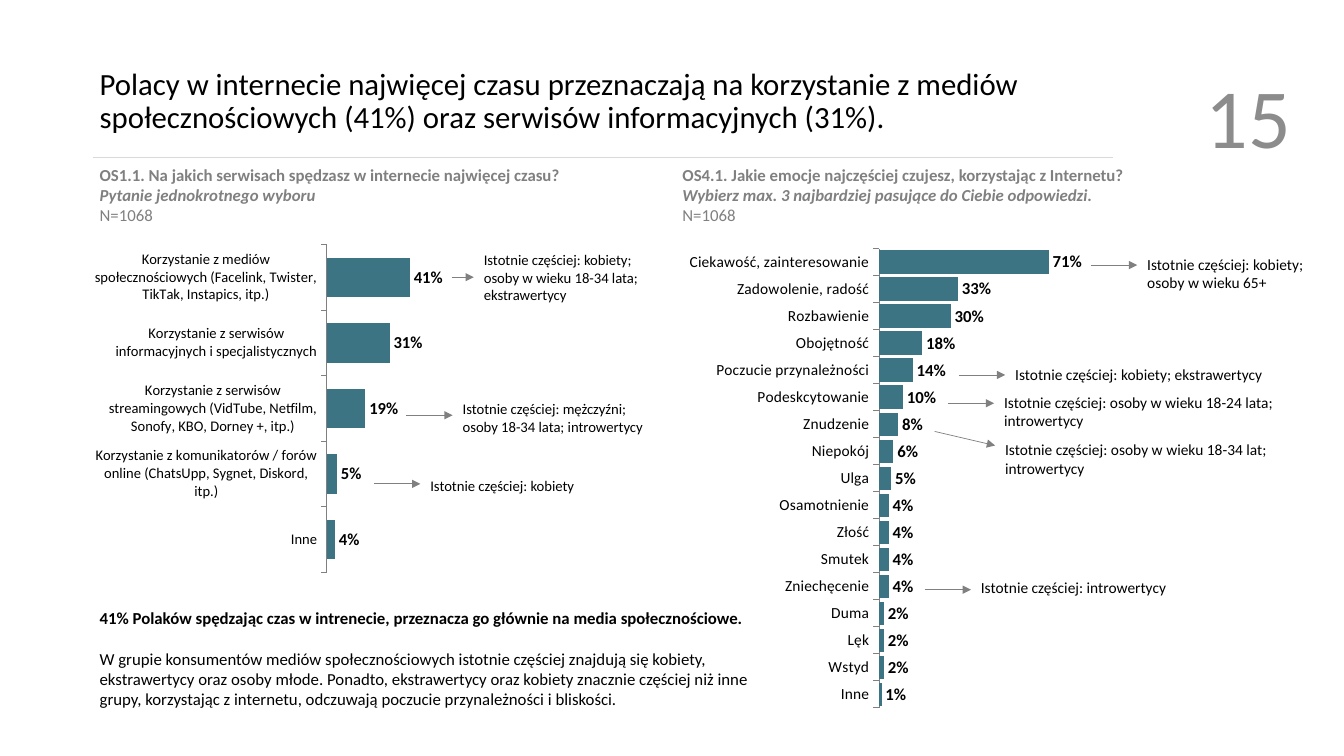
from collections import namedtuple

from lxml import etree
from pptx import Presentation
from pptx.chart.data import CategoryChartData
from pptx.dml.color import RGBColor
from pptx.enum.chart import XL_CHART_TYPE as ChartType
from pptx.enum.chart import XL_LABEL_POSITION as LabelPosition
from pptx.enum.chart import XL_TICK_LABEL_POSITION as TickLabelPosition
from pptx.enum.chart import XL_TICK_MARK as TickMark
from pptx.enum.shapes import MSO_CONNECTOR as Connector
from pptx.enum.text import MSO_ANCHOR as Anchor
from pptx.enum.text import PP_ALIGN as Align
from pptx.oxml import parse_xml
from pptx.oxml.ns import nsdecls, qn
from pptx.util import Inches, Pt

FONT = "Calibri"
BLACK = RGBColor(0x00, 0x00, 0x00)
WHITE = RGBColor(0xFF, 0xFF, 0xFF)
GREY = RGBColor(0x80, 0x80, 0x80)
NUMBER_GREY = RGBColor(0x8C, 0x8C, 0x8C)
RULE_GREY = RGBColor(0xD9, 0xD9, 0xD9)
TEAL = RGBColor(0x3C, 0x74, 0x83)

Box = namedtuple("Box", "left top width height")
# Arrow start and text box are measured from the panel corner and the arrow end.
Callout = namedtuple("Callout", "x y dx dy rise width text")

SERVICES = {
    "Korzystanie z mediów społecznościowych (Facelink, Twister, TikTak, Instapics, itp.)": 0.41,
    "Korzystanie z serwisów informacyjnych i specjalistycznych": 0.31,
    "Korzystanie z serwisów streamingowych (VidTube, Netfilm, Sonofy, KBO, Dorney +, itp.)": 0.19,
    "Korzystanie z komunikatorów / forów online (ChatsUpp, Sygnet, Diskord, itp.)": 0.05,
    "Inne": 0.04,
}
EMOTIONS = {
    "Ciekawość, zainteresowanie": 0.71, "Zadowolenie, radość": 0.33,
    "Rozbawienie": 0.3, "Obojętność": 0.18, "Poczucie przynależności": 0.14,
    "Podeskcytowanie": 0.1, "Znudzenie": 0.08, "Niepokój": 0.06, "Ulga": 0.05,
    "Osamotnienie": 0.04, "Złość": 0.04, "Smutek": 0.04, "Zniechęcenie": 0.04,
    "Duma": 0.02, "Lęk": 0.02, "Wstyd": 0.02, "Inne": 0.01,
}
SERVICE_CALLOUTS = [
    Callout(3.59, 1.17, 0.22, 0, 0.31, 1.82,
            "Istotnie częściej: kobiety;\nosoby w wieku 18-34 lata;\nekstrawertycy"),
    Callout(3.14, 2.54, 0.46, 0, 0.2, 2.83,
            "Istotnie częściej: mężczyźni;\nosoby 18-34 lata; introwertycy"),
    Callout(2.82, 3.22, 0.46, 0, 0.12, 2.83, "Istotnie częściej: kobiety"),
]
EMOTION_CALLOUTS = [
    Callout(4.75, 1.05, 0.46, 0, 0.15, 2,
            "Istotnie częściej: kobiety;\nosoby w wieku 65+"),
    Callout(3.44, 2.14, 0.46, 0, 0.15, 3.1, "Istotnie częściej: kobiety; ekstrawertycy"),
    Callout(3.33, 2.42, 0.46, 0, 0.15, 3.1,
            "Istotnie częściej: osoby w wieku 18-24 lata; introwertycy"),
    Callout(3.2, 2.7, 0.6, 0.14, 0.1, 3.1,
            "Istotnie częściej: osoby w wieku 18-34 lat; introwertycy"),
    Callout(3.1, 4.27, 0.46, 0, 0.16, 3.1, "Istotnie częściej: introwertycy"),
]


def add_text(slide, box, *paragraphs, size=12, color=BLACK, align=Align.LEFT,
             anchor=Anchor.TOP, line_spacing=None, gap=0, fill=None):
    """Each paragraph is a list of (text, bold, italic) lines."""
    shape = slide.shapes.add_textbox(*map(Inches, box))
    if fill is not None:
        shape.fill.solid()
        shape.fill.fore_color.rgb = fill
    frame = shape.text_frame
    frame.word_wrap = True
    frame.vertical_anchor = anchor
    for index, lines in enumerate(paragraphs):
        paragraph = frame.add_paragraph() if index else frame.paragraphs[0]
        paragraph.alignment = align
        if line_spacing:
            paragraph.line_spacing = line_spacing
        if index:
            paragraph.space_before = Pt(gap)
        for number, (text, bold, italic) in enumerate(lines):
            if number:
                paragraph.add_line_break()
            run = paragraph.add_run()
            run.text = text
            set_font(run.font, size, color, bold, italic)


def set_font(font, size, color=BLACK, bold=False, italic=False):
    font.name = FONT
    font.size = Pt(size)
    font.color.rgb = color
    font.bold = bold
    font.italic = italic


def add_line(slide, start, end, color, width, arrow=False):
    line = slide.shapes.add_connector(Connector.STRAIGHT, *map(Inches, (*start, *end)))
    line.line.color.rgb = color
    line.line.width = Pt(width)
    properties = line.element.spPr
    if arrow:
        outline = properties.find(qn("a:ln"))
        etree.SubElement(outline, qn("a:tailEnd"), type="triangle")
    etree.SubElement(properties, qn("a:effectLst"))


def add_bar_chart(slide, box, values, label_size, gap, overlap, plot_height):
    data = CategoryChartData(number_format="0%")
    data.categories = list(values)
    data.add_series("Series 1", list(values.values()))
    chart = slide.shapes.add_chart(
        ChartType.BAR_CLUSTERED, *map(Inches, box), data).chart
    set_font(chart.font, 10)
    chart.has_legend = False
    chart.has_title = False

    categories = chart.category_axis
    categories.reverse_order = True
    categories.major_tick_mark = TickMark.OUTSIDE
    categories.minor_tick_mark = TickMark.NONE
    categories.tick_label_position = TickLabelPosition.LOW
    categories.format.line.color.rgb = GREY
    categories.format.line.width = Pt(0.75)
    set_font(categories.tick_labels.font, label_size)
    scale = chart.value_axis
    scale.minimum_scale, scale.maximum_scale = 0, 1
    scale.has_major_gridlines = False
    scale.visible = False

    plot = chart.plots[0]
    plot.gap_width, plot.overlap = gap, overlap
    plot.vary_by_categories = False
    series = plot.series[0]
    series.format.fill.solid()
    series.format.fill.fore_color.rgb = TEAL
    labels = series.data_labels
    labels.show_value = True
    labels.number_format = "0%"
    labels.number_format_is_linked = False
    labels.position = LabelPosition.OUTSIDE_END
    set_font(labels.font, 12, bold=True)
    set_plot_area(chart, Box(0.499, 0.008, 0.446, plot_height))


def set_plot_area(chart, area):
    """Fix the inner plot area as fractions of the chart."""
    plot_area = chart.element.find(".//" + qn("c:plotArea"))
    for layout in plot_area.findall(qn("c:layout")):
        plot_area.remove(layout)
    plot_area.insert(0, parse_xml(
        f'<c:layout {nsdecls("c")}><c:manualLayout><c:layoutTarget val="inner"/>'
        '<c:xMode val="edge"/><c:yMode val="edge"/>'
        f'<c:x val="{area.left}"/><c:y val="{area.top}"/>'
        f'<c:w val="{area.width}"/><c:h val="{area.height}"/>'
        '</c:manualLayout></c:layout>'))


def add_header(slide, box, title, number):
    title_width = 10.11
    add_text(slide, Box(box.left, box.top, title_width, 1.17), [(title, False, False)],
             size=22, anchor=Anchor.MIDDLE, line_spacing=0.9)
    number_width = 1.58
    add_text(slide, Box(box.left + box.width - number_width, box.top, number_width, box.height),
             [(number, False, False)], size=60, color=NUMBER_GREY,
             align=Align.RIGHT, anchor=Anchor.MIDDLE)
    rule_top = box.top + 1.13
    add_line(slide, (box.left + 0.03, rule_top), (box.left + 10.15, rule_top), RULE_GREY, 0.75)


def add_panel(slide, box, question, hint, values, callouts, heading_indent,
              chart_offset, chart_height, label_size, **bar_format):
    """Survey question with its bar chart and the arrows to its callouts."""
    add_text(slide, Box(box.left + heading_indent, box.top, 5.2, 0.71),
             [(question, True, False), (hint, True, True), ("N=1068", False, False)], color=GREY)
    dx, dy = chart_offset
    add_bar_chart(slide, Box(box.left + dx, box.top + dy, box.width - dx, chart_height),
                  values, label_size, **bar_format)
    for callout in callouts:
        start = box.left + callout.x, box.top + callout.y
        end = start[0] + callout.dx, start[1] + callout.dy
        add_line(slide, start, end, GREY, 0.5, arrow=True)
        lines = [(line, False, False) for line in callout.text.split("\n")]
        add_text(slide, Box(end[0], end[1] - callout.rise, callout.width, 0.47),
                 lines, size=label_size)


def add_conclusion(slide, box):
    add_text(slide, box,
             [("41% Polaków spędzając czas w intrenecie, przeznacza go głównie na media "
               "społecznościowe.", True, False)],
             [("W grupie konsumentów mediów społecznościowych istotnie częściej znajdują się "
               "kobiety, ekstrawertycy oraz osoby młode. Ponadto, ekstrawertycy oraz kobiety "
               "znacznie częściej niż inne grupy, korzystając z internetu, odczuwają poczucie "
               "przynależności i bliskości.", False, False)],
             gap=14.5, fill=WHITE)


def main():
    presentation = Presentation()
    presentation.slide_width, presentation.slide_height = Inches(13.33), Inches(7.5)
    slide = presentation.slides.add_slide(presentation.slide_layouts[6])
    add_header(slide, Box(0.89, 0.43, 12.01, 1.42),
               "Polacy w internecie najwięcej czasu przeznaczają na korzystanie z mediów "
               "społecznościowych (41%) oraz serwisów informacyjnych (31%).", "15")
    add_conclusion(slide, Box(0.89, 5.98, 6.73, 1.11))
    add_panel(slide, Box(0.89, 1.58, 4.61, 4.26),
              "OS1.1. Na jakich serwisach spędzasz w internecie najwięcej czasu?",
              "Pytanie jednokrotnego wyboru", SERVICES, SERVICE_CALLOUTS, 0,
              (0.05, 0.82), 3.44, 10.5, gap=66, overlap=0, plot_height=0.945)
    add_panel(slide, Box(6.07, 1.58, 5.31, 5.51),
              "OS4.1. Jakie emocje najczęściej czujesz, korzystając z Internetu?",
              "Wybierz max. 3 najbardziej pasujące do Ciebie odpowiedzi.",
              EMOTIONS, EMOTION_CALLOUTS, 0.6,
              (0, 0.85), 4.66, 11, gap=15, overlap=4, plot_height=0.978)
    presentation.save("out.pptx")


if __name__ == "__main__":
    main()
